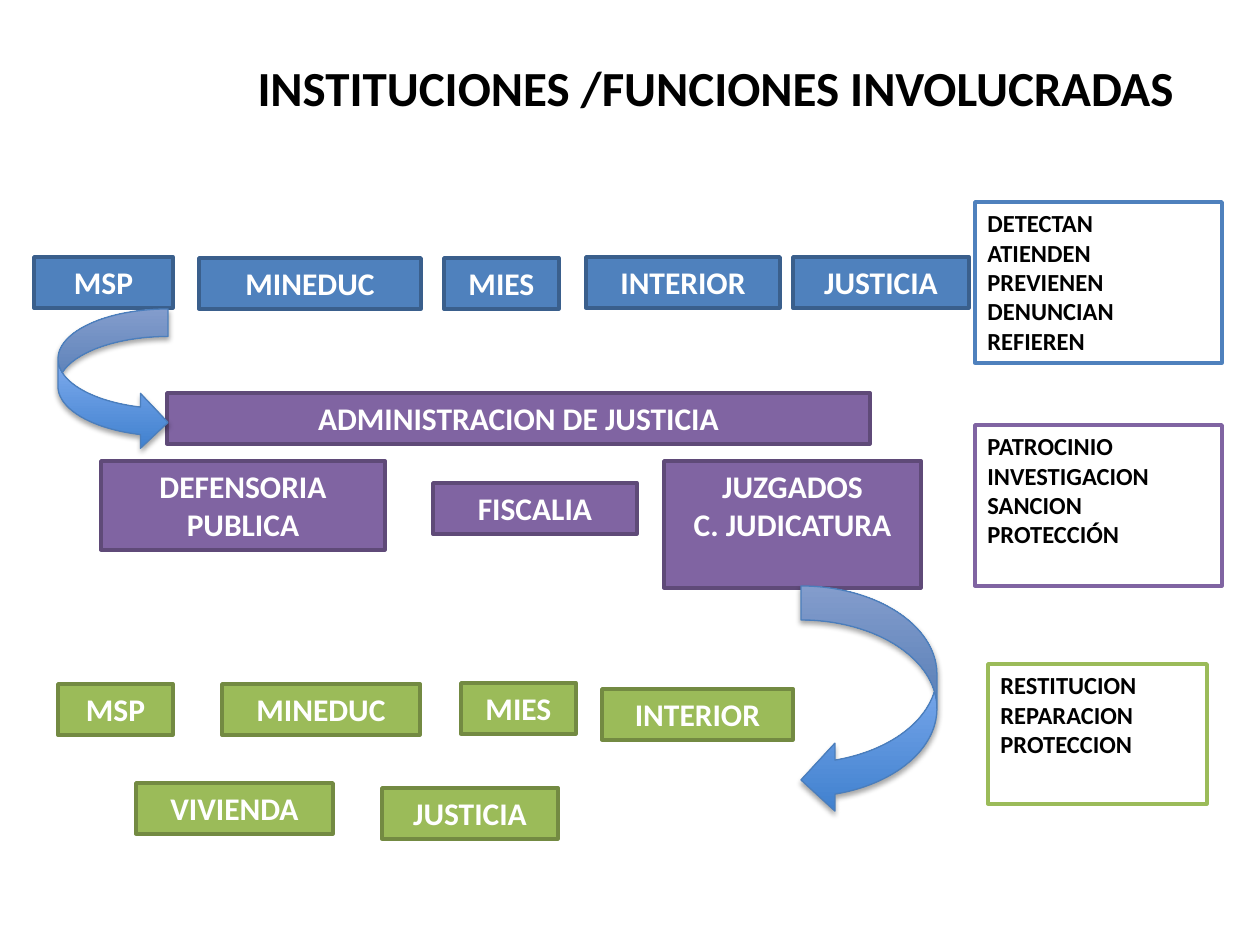
from lxml import etree
from pptx import Presentation
from pptx import util as u
from pptx.dml.color import RGBColor
from pptx.enum import shapes, text
from pptx.oxml.ns import qn

PX = u.Inches(1) / 126
THEME = {
    "font": "Calibri",
    "ink": "000000",
    "paper": "FFFFFF",
    "blue": ("4F81BD", "3A5F8C"),
    "purple": ("8064A2", "5F4A78"),
    "green": ("9BBB59", "738A42"),
    "arrow_stops": ("3F80CE", "A4C4FF"),
    "arrow_line": "4B7EBC",
    "title_size": 28,
    "box_size": 18,
    "note_size": 14,
}


def write(shape, wording, size, color, align, anchor=text.MSO_ANCHOR.TOP):
    frame = shape.text_frame
    frame.text = wording
    frame.word_wrap = True
    frame.vertical_anchor = anchor
    font_format = {"name": THEME["font"], "size": u.Pt(size), "bold": True}
    for paragraph in frame.paragraphs:
        paragraph.alignment = align
        for name, value in font_format.items():
            setattr(paragraph.runs[0].font, name, value)
        paragraph.runs[0].font.color.rgb = RGBColor.from_string(color)


def add_shape(kind, bounds, line_color, line_width, fill_color=None):
    shape = slide.shapes.add_shape(kind, *(round(n * PX) for n in bounds))
    shape.shadow.inherit = False
    shape.line.color.rgb = RGBColor.from_string(line_color)
    shape.line.width = u.Pt(line_width)
    if fill_color:
        shape.fill.solid()
        shape.fill.fore_color.rgb = RGBColor.from_string(fill_color)
    return shape


presentation = Presentation()
presentation.slide_width = round(1260 * PX)
presentation.slide_height = round(945 * PX)
slide = presentation.slides.add_slide(presentation.slide_layouts[6])

title = slide.shapes.add_textbox(*(round(n * PX) for n in (63, 38, 1134, 97)))
write(title, "INSTITUCIONES /FUNCIONES INVOLUCRADAS ", THEME["title_size"],
      THEME["ink"], text.PP_ALIGN.RIGHT, text.MSO_ANCHOR.MIDDLE)

institutions = {
    "blue": [
        ("MSP", 34, 257, 139, 51),
        ("MINEDUC", 199, 258, 222, 51),
        ("MIES", 444, 258, 115, 51),
        ("INTERIOR", 586, 257, 194, 51),
        ("JUSTICIA", 793, 257, 176, 51),
    ],
    "purple": [
        ("ADMINISTRACION DE JUSTICIA", 167, 393, 703, 51),
        ("DEFENSORIA PUBLICA", 101, 461, 284, 89),
        ("FISCALIA", 433, 483, 204, 51),
        ("JUZGADOS\nC. JUDICATURA", 664, 461, 257, 127),
    ],
    "green": [
        ("MSP", 58, 684, 115, 51),
        ("MINEDUC", 222, 684, 198, 51),
        ("MIES", 461, 683, 115, 51),
        ("INTERIOR", 602, 689, 191, 51),
        ("JUSTICIA", 382, 788, 176, 51),
        ("VIVIENDA", 136, 783, 197, 51),
    ],
}
for group, boxes in institutions.items():
    fill_color, line_color = THEME[group]
    for wording, *bounds in boxes:
        box = add_shape(shapes.MSO_SHAPE.RECTANGLE, bounds, line_color, 2, fill_color)
        write(box, wording, THEME["box_size"], THEME["paper"], text.PP_ALIGN.CENTER)

functions = [
    ("blue", "DETECTAN\nATIENDEN\nPREVIENEN\nDENUNCIAN\nREFIEREN", (975, 202, 247, 161)),
    ("purple", "PATROCINIO\nINVESTIGACION\nSANCION\nPROTECCIÓN", (975, 425, 247, 161)),
    ("green", "RESTITUCION\nREPARACION\nPROTECCION", (988, 664, 219, 140)),
]
for group, wording, bounds in functions:
    note = add_shape(shapes.MSO_SHAPE.RECTANGLE, bounds, THEME[group][0], 2, THEME["paper"])
    write(note, wording, THEME["note_size"], THEME["ink"], text.PP_ALIGN.LEFT)

arrows = [
    (shapes.MSO_SHAPE.CURVED_LEFT_ARROW, (801, 586, 136, 228)),
    (shapes.MSO_SHAPE.CURVED_RIGHT_ARROW, (58, 309, 110, 141)),
]
for kind, bounds in arrows:
    arrow = add_shape(kind, bounds, THEME["arrow_line"], 0.75)
    arrow.fill.gradient()
    arrow.fill.gradient_angle = 90
    for stop, position, color in zip(arrow.fill.gradient_stops, (0, 1), THEME["arrow_stops"]):
        stop.position = position
        stop.color.rgb = RGBColor.from_string(color)
    effects = arrow.element.spPr.find(qn("a:effectLst"))
    shadow = etree.SubElement(effects, qn("a:outerShdw"), blurRad=str(u.Pt(3.1)),
                              dist=str(u.Pt(1.8)), dir="5400000", rotWithShape="0")
    shadow_color = etree.SubElement(shadow, qn("a:srgbClr"), val=THEME["ink"])
    etree.SubElement(shadow_color, qn("a:alpha"), val="35000")

presentation.save("out.pptx")
